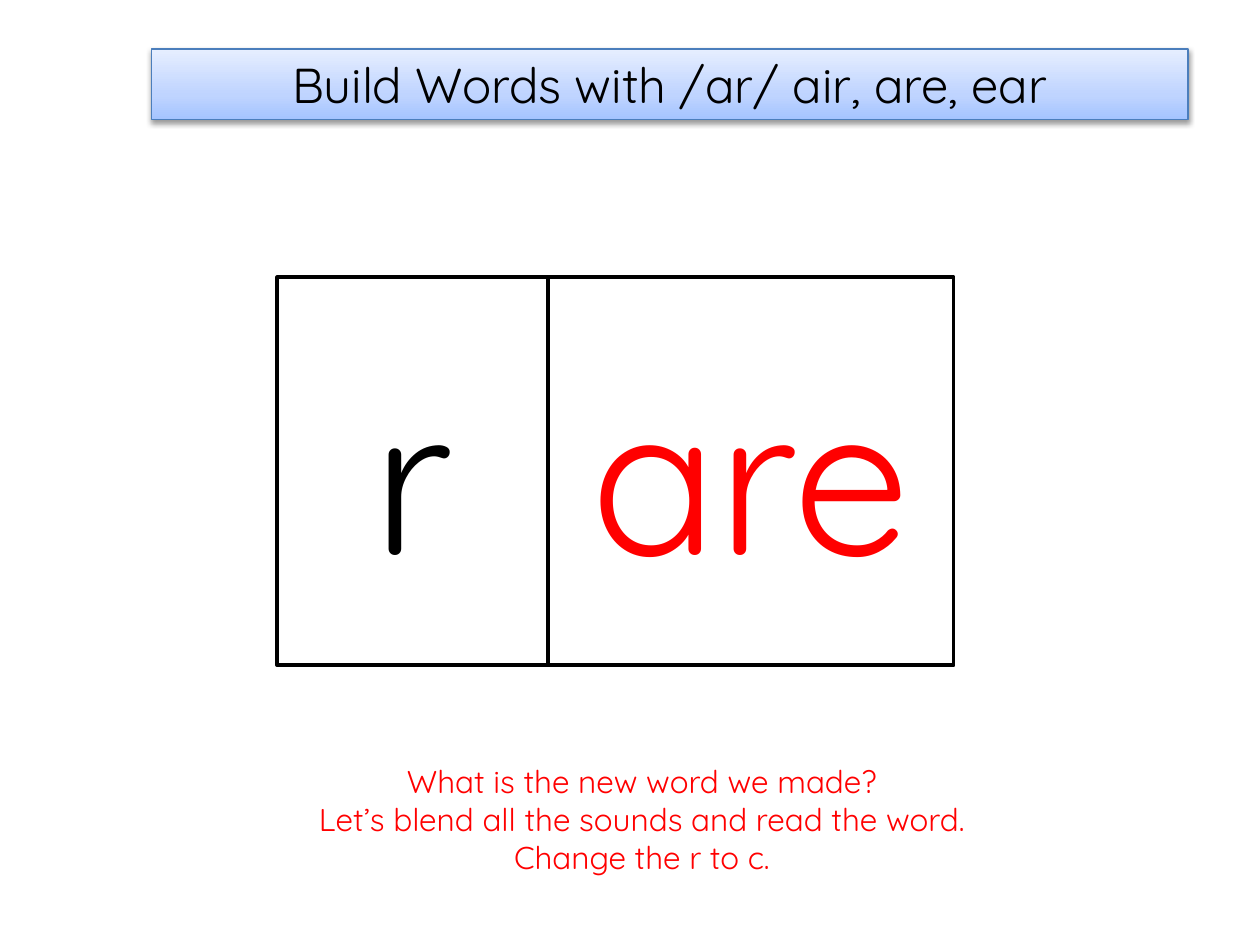
from copy import deepcopy
from lxml.etree import SubElement
from pptx import Presentation
from pptx.dml.color import RGBColor
from pptx.enum.shapes import MSO_SHAPE
from pptx.enum.text import MSO_ANCHOR, PP_ALIGN
from pptx.oxml.ns import qn
from pptx.util import Inches, Pt

WIDE, HIGH = 10, 7.5
BLACK, WHITE, RED = "000000", "FFFFFF", "FF0000"
EDGE = "4B7EBC"
BLEND = [(0, "A4C4FF"), (0.35, "BFD4FF"), (1, "E6EEFF")]
SHADE = {"blurRad": Pt(3.1), "dist": Pt(1.6), "dir": 90 * 60000,
         "algn": "ctr", "rotWithShape": 0}


def tint(code):
    return RGBColor.from_string(code)


def apply(item, form):
    for name, value in form.items():
        setattr(item, name, value)


def write(shape, lines, size, color, anchor):
    frame = shape.text_frame
    apply(frame, {"word_wrap": True, "vertical_anchor": anchor})
    for at, line in enumerate(lines):
        para = frame.add_paragraph() if at else frame.paragraphs[0]
        para.alignment = PP_ALIGN.CENTER
        run = para.add_run()
        run.text = line
        apply(run.font, {"name": "Quicksand", "size": Pt(size)})
        run.font.color.rgb = tint(color)


def panel(slide, box, edge, width):
    shape = slide.shapes.add_shape(MSO_SHAPE.RECTANGLE, *map(Inches, box))
    shape.shadow.inherit = False
    shape.line.color.rgb = tint(edge)
    shape.line.width = Pt(width)
    return shape


def blend(fill, stops):
    fill.gradient()
    fill.gradient_angle = 90
    group = fill.gradient_stops
    first = group[0]._gs
    first.addnext(deepcopy(first))
    for stop, (place, code) in zip(fill.gradient_stops, stops):
        stop.position = place
        stop.color.rgb = tint(code)


def shade(shape):
    effects = shape._element.spPr.find(qn("a:effectLst"))
    cast = SubElement(effects, qn("a:outerShdw"),
                      {name: str(value) for name, value in SHADE.items()})
    color = SubElement(cast, qn("a:srgbClr"), val=BLACK)
    SubElement(color, qn("a:alpha"), val="38000")


def banner(slide, box, title):
    shape = panel(slide, box, EDGE, 0.75)
    blend(shape.fill, BLEND)
    shade(shape)
    write(shape, [title], 28, BLACK, MSO_ANCHOR.MIDDLE)


def sounds(slide, box, parts):
    left, top, width, height = box
    total = sum(share for _, share, _ in parts)
    for text, share, color in parts:
        span = width * share / total
        shape = panel(slide, (left, top, span, height), BLACK, 2)
        shape.fill.solid()
        shape.fill.fore_color.rgb = tint(WHITE)
        write(shape, [text], 120, color, MSO_ANCHOR.MIDDLE)
        left += span


def prompt(slide, box, lines):
    shape = slide.shapes.add_textbox(*map(Inches, box))
    write(shape, lines, 18, RED, MSO_ANCHOR.TOP)


def main():
    deck = Presentation()
    apply(deck, {"slide_width": Inches(WIDE), "slide_height": Inches(HIGH)})
    slide = deck.slides.add_slide(deck.slide_layouts[6])
    banner(slide, (1.2, 0.39, 8.23, 0.56),
           "Build Words with /ar/ air, are, ear")
    sounds(slide, (2.2, 2.2, 5.37, 3.08), [("r", 2, BLACK), ("are", 3, RED)])
    prompt(slide, (1.61, HIGH * 0.8, 6.97, 1.01), [
        "What is the new word we made?",
        "Let’s blend all the sounds and read the word.",
        "Change the r to c."])
    deck.save("out.pptx")


if __name__ == "__main__":
    main()
